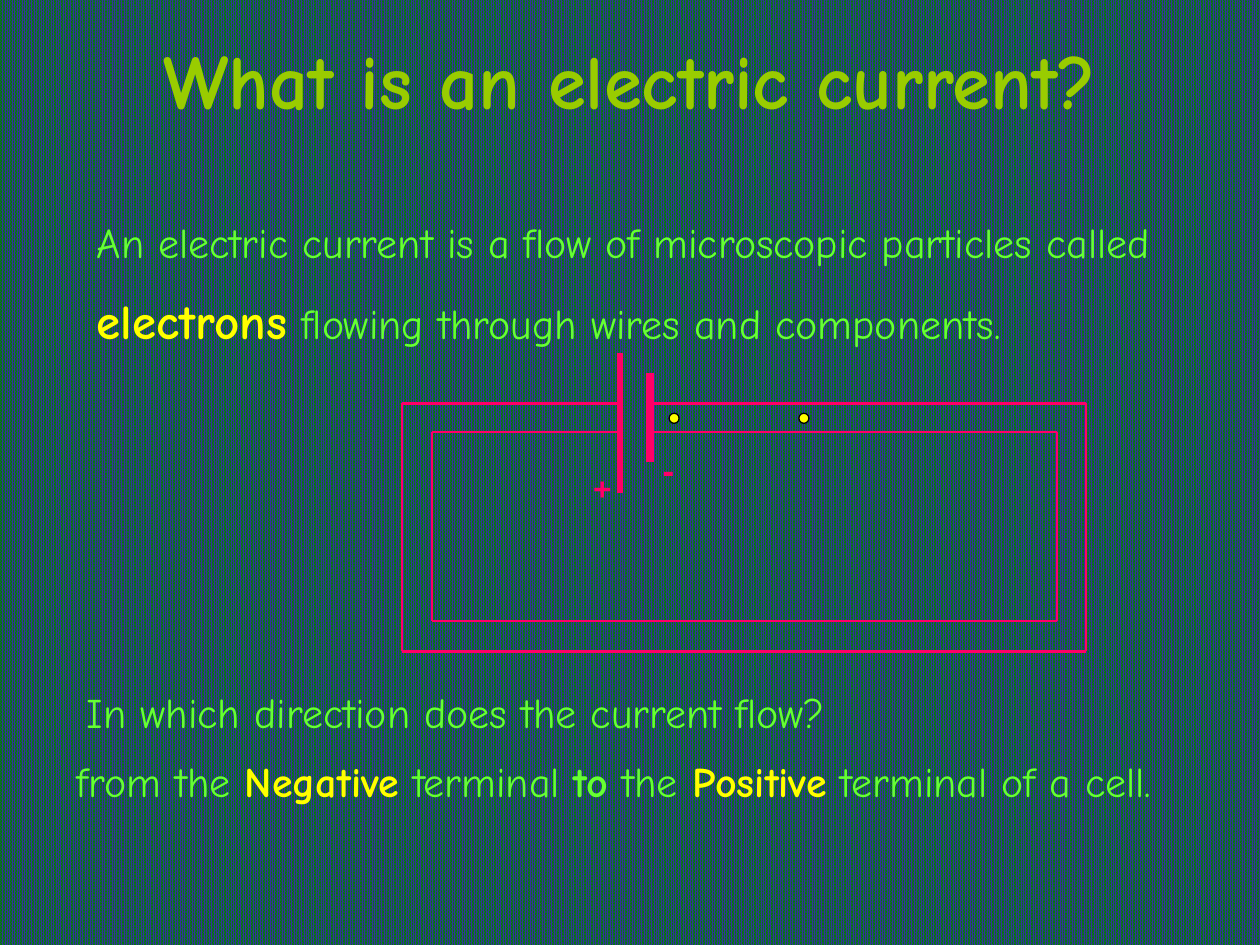
from lxml import etree
from pptx import Presentation
from pptx.dml.color import RGBColor
from pptx.enum.dml import MSO_PATTERN
from pptx.enum.shapes import MSO_CONNECTOR, MSO_SHAPE
from pptx.enum.text import MSO_ANCHOR, MSO_AUTO_SIZE, PP_ALIGN
from pptx.oxml.ns import qn
from pptx.util import Inches, Pt

STRAIGHT = MSO_CONNECTOR.STRAIGHT
OVAL = MSO_SHAPE.OVAL
TOP, MIDDLE = MSO_ANCHOR.TOP, MSO_ANCHOR.MIDDLE
LEFT, CENTER = PP_ALIGN.LEFT, PP_ALIGN.CENTER
GROW = MSO_AUTO_SIZE.SHAPE_TO_FIT_TEXT
DENSE_DOTS = MSO_PATTERN.PERCENT_90

WIDTH, HEIGHT = Inches(10), Inches(7.5)
FONT, SIGN_FONT = "Comic Neue", "Arial"
COLORS = {
    "stripe": "333399",
    "backdrop": "008000",
    "title": "99CC00",
    "body": "66FF33",
    "keyword": "FFFF00",
    "circuit": "FF0066",
    "outline": "000000",
}

# Positions are percentages of the slide's width (x) and height (y).
POSITIVE_PLATE_X, NEGATIVE_PLATE_X = 49.2, 51.6
OUTER_WIRE = (31.9, 42.67, 86.2, 68.93)
INNER_WIRE = (34.3, 45.73, 83.9, 65.73)
ELECTRON_LEFTS = (53.1, 63.4)


def color(name):
    return RGBColor.from_string(COLORS[name])


def across(percent):
    return round(WIDTH * percent / 100)


def down(percent):
    return round(HEIGHT * percent / 100)


def paint_background(slide):
    fill = slide.background.fill
    fill.patterned()
    fill.pattern = DENSE_DOTS
    fill.fore_color.rgb = color("stripe")
    fill.back_color.rgb = color("backdrop")


def add_text(slide, area, runs, size=24, font=FONT, align=LEFT, anchor=TOP, spacing=None):
    """Add one paragraph; each run is (text, colour name, bold[, own size])."""
    left, top, width, height = area
    box = slide.shapes.add_textbox(across(left), down(top), across(width), down(height))
    frame = box.text_frame
    frame.word_wrap = True
    frame.auto_size = GROW
    frame.vertical_anchor = anchor
    paragraph = frame.paragraphs[0]
    paragraph.alignment = align
    if spacing:
        paragraph.line_spacing = spacing
    paragraph.font.name = font
    paragraph.font.size = Pt(size)
    for text, color_name, bold, *own_size in runs:
        run = paragraph.add_run()
        run.text = text
        run.font.bold = bold
        run.font.color.rgb = color(color_name)
        if own_size:
            run.font.size = Pt(own_size[0])


def add_line(slide, start, end, weight=1.5):
    line = slide.shapes.add_connector(
        STRAIGHT, across(start[0]), down(start[1]), across(end[0]), down(end[1])
    )
    line.line.color.rgb = color("circuit")
    line.line.width = Pt(weight)
    etree.SubElement(line._element.spPr, qn("a:effectLst"))


def add_wire(slide, left, top, right, bottom):
    """Draw a loop from one cell plate round to the other."""
    corners = [
        (NEGATIVE_PLATE_X, top),
        (right, top),
        (right, bottom),
        (left, bottom),
        (left, top),
        (POSITIVE_PLATE_X, top),
    ]
    for start, end in zip(corners, corners[1:]):
        add_line(slide, start, end)


def add_cell(slide):
    add_line(slide, (POSITIVE_PLATE_X, 37.33), (POSITIVE_PLATE_X, 52.13), 3)
    add_line(slide, (NEGATIVE_PLATE_X, 39.47), (NEGATIVE_PLATE_X, 48.93), 4.5)
    add_text(slide, (46.1, 48.93, 3.9, 5.33), [("+", "circuit", True)], 18, SIGN_FONT)
    add_text(slide, (51.6, 46.8, 3.9, 5.73), [("-", "circuit", True)], 20, SIGN_FONT)


def add_electron(slide, left):
    diameter = across(0.8)
    electron = slide.shapes.add_shape(OVAL, across(left), down(43.73), diameter, diameter)
    electron.shadow.inherit = False
    electron.fill.solid()
    electron.fill.fore_color.rgb = color("keyword")
    electron.line.color.rgb = color("outline")
    electron.line.width = Pt(0.75)


def main():
    presentation = Presentation()
    presentation.slide_width, presentation.slide_height = WIDTH, HEIGHT
    slide = presentation.slides.add_slide(presentation.slide_layouts[6])
    paint_background(slide)

    title = [("What is an electric current?", "title", True)]
    add_text(slide, (0, 2.8, 100, 11.07), title, 44, align=CENTER)

    definition = [
        ("An electric current is a flow of microscopic particles called ", "body", False),
        ("electrons", "keyword", True, 28),
        (" flowing through wires and components.", "body", False),
    ]
    add_text(slide, (6.7, 16.4, 85.8, 24.93), definition, anchor=MIDDLE, spacing=1.4)

    for wire in (OUTER_WIRE, INNER_WIRE):
        add_wire(slide, *wire)
    add_cell(slide)
    for left in ELECTRON_LEFTS:
        add_electron(slide, left)

    question = [("In which direction does the current flow?", "body", False)]
    add_text(slide, (5.9, 72, 67.7, 6.67), question)

    answer = [
        ("from the ", "body", False),
        ("Negative", "keyword", True),
        (" terminal ", "body", False),
        ("to", "body", True),
        (" the ", "body", False),
        ("Positive", "keyword", True),
        (" terminal of a cell.", "body", False),
    ]
    add_text(slide, (5.1, 79.33, 94.9, 12), answer)

    presentation.save("out.pptx")


if __name__ == "__main__":
    main()
